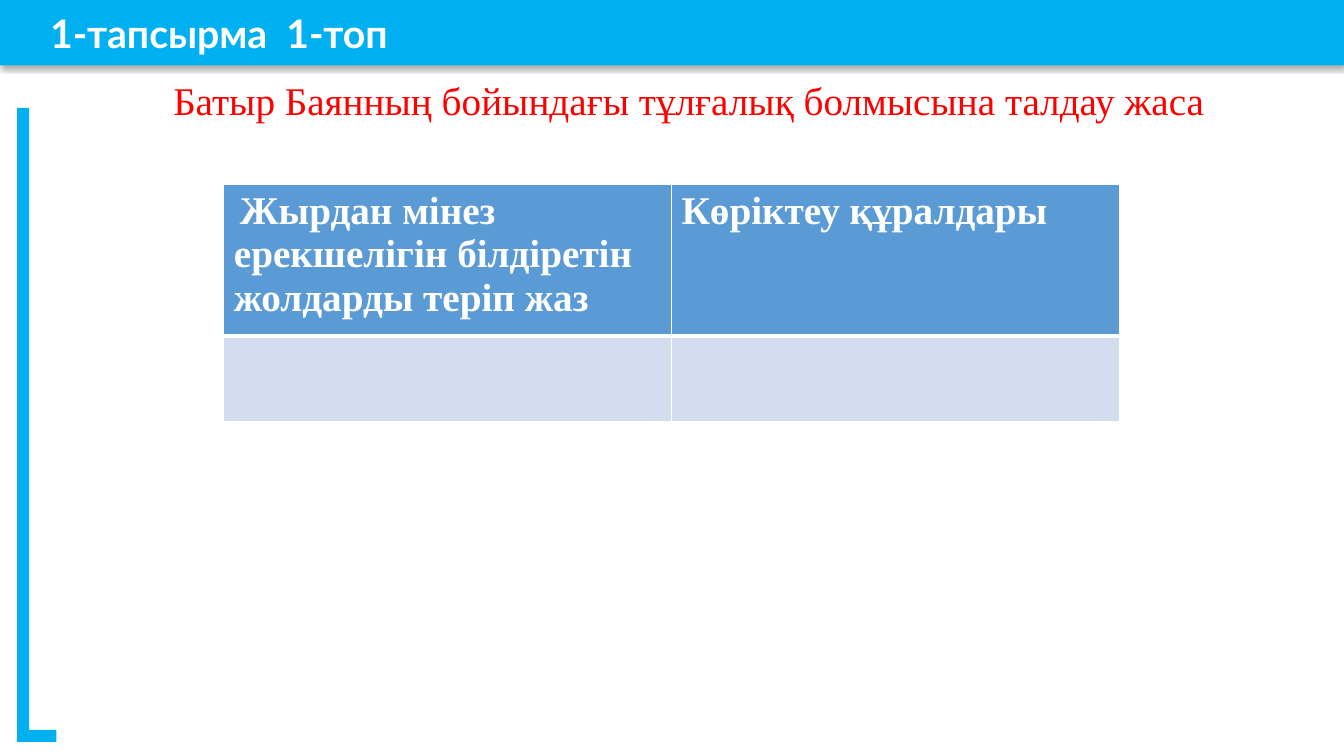
from lxml.etree import SubElement
from pptx import Presentation
from pptx.dml.color import RGBColor
from pptx.enum.shapes import MSO_SHAPE
from pptx.enum.text import MSO_ANCHOR, PP_ALIGN
from pptx.oxml.ns import qn
from pptx.util import Inches, Pt

SKY_BLUE = "00B0F0"
WHITE = "FFFFFF"
RED = "FF0000"
HEADER_BLUE = "5B9BD5"
BODY_BLUE = "D2DEEF"
HEADERS = ["Жырдан мінез ерекшелігін білдіретін жолдарды теріп жаз", "Көріктеу құралдары"]


def color(hex_value):
    return RGBColor.from_string(hex_value)


def fill_plain(shape, hex_value):
    shape.shadow.inherit = False
    shape.fill.solid()
    shape.fill.fore_color.rgb = color(hex_value)
    shape.line.fill.background()


def write(paragraph, text, font_name, hex_value, bold=False, indent=0):
    """Fill a left-aligned paragraph whose first line is indented by inches."""
    paragraph.text = text
    paragraph.alignment = PP_ALIGN.LEFT
    if indent:
        properties = paragraph._p.get_or_add_pPr()
        properties.set("marL", "0")
        properties.set("indent", str(Inches(indent)))
    font = paragraph.font
    font.name = font_name
    font.size = Pt(28)
    font.bold = bold
    font.color.rgb = color(hex_value)


def add_drop_shadow(shape):
    effects = shape._element.spPr.find(qn("a:effectLst"))
    shadow = SubElement(effects, qn("a:outerShdw"), blurRad=str(Pt(3.5)),
                        dist=str(Pt(2.2)), dir="5400000", algn="t", rotWithShape="0")
    black = SubElement(shadow, qn("a:srgbClr"), val="000000")
    SubElement(black, qn("a:alpha"), val="32000")


def add_title_bar(slide, width):
    bar = slide.shapes.add_shape(MSO_SHAPE.RECTANGLE, 0, 0, width, Inches(0.65))
    fill_plain(bar, SKY_BLUE)
    add_drop_shadow(bar)
    bar.text_frame.vertical_anchor = MSO_ANCHOR.MIDDLE
    write(bar.text_frame.paragraphs[0], "1-тапсырма  1-топ", "Lato", WHITE,
          bold=True, indent=0.4)


def add_corner_bracket(slide):
    left, top, right, bottom, thickness = 0.17, 1.07, 0.56, 7.36, 0.12
    builder = slide.shapes.build_freeform(Inches(left), Inches(top))
    corners = [(left + thickness, top), (left + thickness, bottom - thickness),
               (right, bottom - thickness), (right, bottom), (left, bottom)]
    builder.add_line_segments([(Inches(x), Inches(y)) for x, y in corners])
    fill_plain(builder.convert_to_shape(), SKY_BLUE)


def add_task(slide):
    box = slide.shapes.add_textbox(Inches(1.62), Inches(0.71), Inches(10.78), Inches(0.57))
    box.text_frame.word_wrap = True
    write(box.text_frame.paragraphs[0],
          "Батыр Баянның бойындағы тұлғалық болмысына талдау жаса",
          "Times New Roman", RED)


def set_borders(cell, bottom_width):
    properties = cell._tc.get_or_add_tcPr()
    widths = {"a:lnL": 1, "a:lnR": 1, "a:lnT": 1, "a:lnB": bottom_width}
    for position, (tag, width) in enumerate(widths.items()):
        line = SubElement(properties, qn(tag), w=str(Pt(width)))
        SubElement(SubElement(line, qn("a:solidFill")), qn("a:srgbClr"), val=WHITE)
        properties.insert(position, line)


def add_answer_table(slide):
    table = slide.shapes.add_table(2, len(HEADERS), Inches(2.22), Inches(1.83),
                                   Inches(8.88), Inches(2.34)).table
    for row, height in zip(table.rows, (1.49, 0.85)):
        row.height = Inches(height)
    for column, header in enumerate(HEADERS):
        for row, (fill, bottom_width) in enumerate([(HEADER_BLUE, 3), (BODY_BLUE, 1)]):
            cell = table.cell(row, column)
            cell.fill.solid()
            cell.fill.fore_color.rgb = color(fill)
            set_borders(cell, bottom_width)
        write(table.cell(0, column).text_frame.paragraphs[0], header,
              "Times New Roman", WHITE, bold=True, indent=0 if column else 0.06)


def main():
    presentation = Presentation()
    presentation.slide_width = Inches(13.33)
    presentation.slide_height = Inches(7.5)
    slide = presentation.slides.add_slide(presentation.slide_layouts[6])
    add_title_bar(slide, presentation.slide_width)
    add_corner_bracket(slide)
    add_task(slide)
    add_answer_table(slide)
    presentation.save("out.pptx")


if __name__ == "__main__":
    main()
